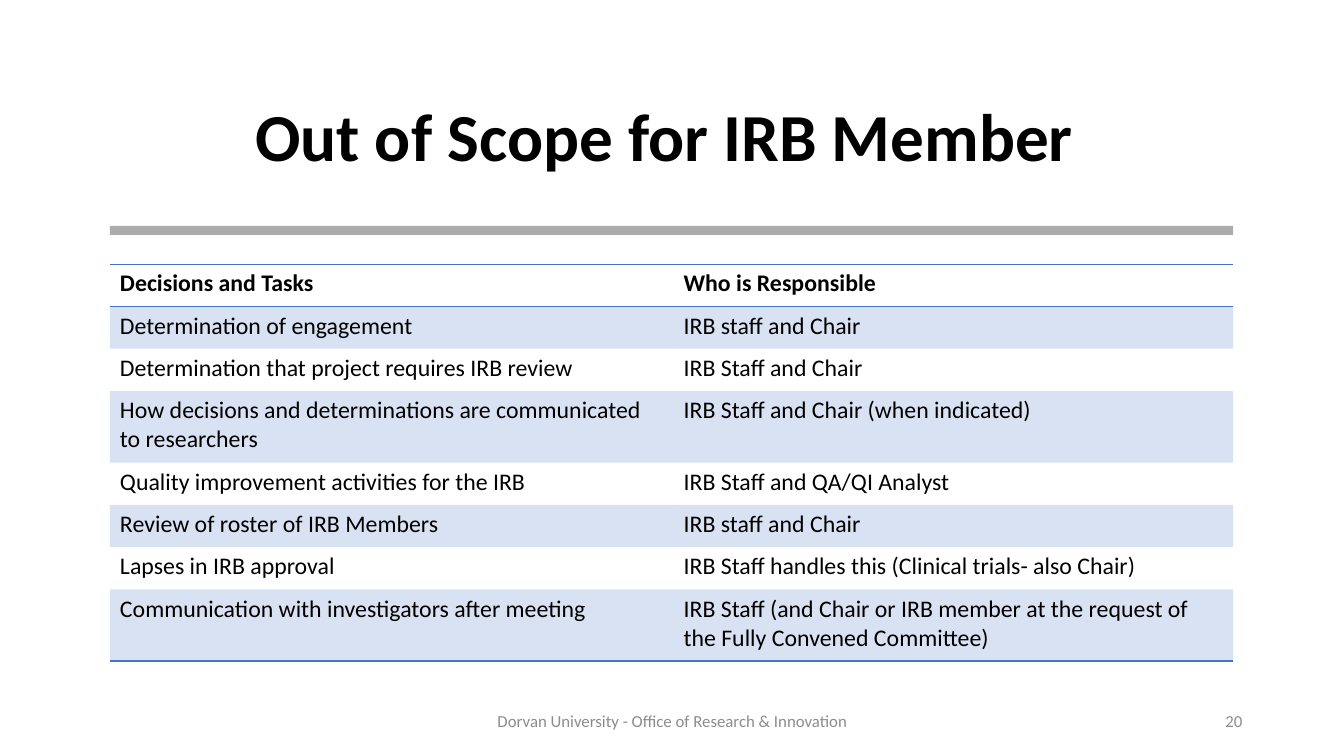
import pptx
import pptx.util
import pptx.dml.color
import pptx.enum.shapes
import pptx.enum.text
import pptx.oxml
import pptx.oxml.ns
import lxml.etree

Inches = pptx.util.Inches
Align = pptx.enum.text.PP_ALIGN
Anchor = pptx.enum.text.MSO_ANCHOR
qn = pptx.oxml.ns.qn

FONT = "Calibri"
PLAIN = "{2D5ABB26-0587-4C30-8999-92F81FD0307C}"
COLORS = {"ink": "000000", "bar": "808080", "blue": "4472C4", "note": "8C8C8C"}
ROWS = [
    ("Decisions and Tasks", "Who is Responsible"),
    ("Determination of engagement", "IRB staff and Chair"),
    ("Determination that project requires IRB review", "IRB Staff and Chair"),
    ("How decisions and determinations are communicated to researchers",
     "IRB Staff and Chair (when indicated)"),
    ("Quality improvement activities for the IRB", "IRB Staff and QA/QI Analyst"),
    ("Review of roster of IRB Members", "IRB staff and Chair"),
    ("Lapses in IRB approval", "IRB Staff handles this (Clinical trials- also Chair)"),
    ("Communication with investigators after meeting",
     "IRB Staff (and Chair or IRB member at the request of the Fully Convened Committee)"),
]
TALL = (3, 7)


def color(name):
    return pptx.dml.color.RGBColor.from_string(COLORS[name])


def write(frame, text, size, tint="ink", bold=False, align=Align.LEFT):
    para = frame.paragraphs[0]
    para.alignment = align
    run = para.add_run()
    run.text = text
    run.font.name = FONT
    run.font.size = pptx.util.Pt(size)
    run.font.bold = bold
    run.font.color.rgb = color(tint)
    return para


def tint(fill, name, share):
    fill.solid()
    fill.fore_color.rgb = color(name)
    node = fill._xPr.find(qn("a:solidFill"))[0]
    lxml.etree.SubElement(node, qn("a:alpha"), val=str(share * 1000))


def edge(cell, side):
    props = cell._tc.get_or_add_tcPr()
    line = lxml.etree.SubElement(props, qn("a:ln" + side), w=str(pptx.util.Pt(1)))
    solid = lxml.etree.SubElement(line, qn("a:solidFill"))
    lxml.etree.SubElement(solid, qn("a:srgbClr"), val=COLORS["blue"])


def add_title(slide, left, top, width, height):
    title = slide.shapes.title
    title.left, title.top = Inches(left), Inches(top)
    title.width, title.height = Inches(width), Inches(height)
    frame = title.text_frame
    frame.word_wrap = True
    frame.vertical_anchor = Anchor.MIDDLE
    para = write(frame, "Out of Scope for IRB Member ", 48, bold=True, align=Align.CENTER)
    para.line_spacing = 0.9


def add_bar(slide, left, top, width, height):
    bar = slide.shapes.add_shape(
        pptx.enum.shapes.MSO_SHAPE.RECTANGLE,
        Inches(left), Inches(top), Inches(width), Inches(height))
    bar.shadow.inherit = False
    bar.line.fill.background()
    tint(bar.fill, "bar", 65)


def add_duties(slide, left, top, width, height):
    table = slide.shapes.add_table(
        len(ROWS), 2, Inches(left), Inches(top), Inches(width), Inches(height)).table
    table._tbl.tblPr.find(qn("a:tableStyleId")).text = PLAIN
    table.horz_banding = False
    first = 5.59
    table.columns[0].width = Inches(first)
    table.columns[1].width = Inches(width - first)
    tall = 0.71
    short = (height - tall * len(TALL)) / (len(ROWS) - len(TALL))
    for r, texts in enumerate(ROWS):
        table.rows[r].height = Inches(tall if r in TALL else short)
        for c, text in enumerate(texts):
            cell = table.cell(r, c)
            cell.margin_left = cell.margin_right = Inches(0.1)
            cell.margin_top = cell.margin_bottom = Inches(0.05)
            if r == 0:
                edge(cell, "T")
            if r in (0, len(ROWS) - 1):
                edge(cell, "B")
            if r % 2:
                tint(cell.fill, "blue", 20)
            else:
                cell.fill.background()
            write(cell.text_frame, text, 17, bold=r == 0)


def add_note(slide, text, align, left, top, width, height):
    box = slide.shapes.add_textbox(
        Inches(left), Inches(top), Inches(width), Inches(height))
    frame = box.text_frame
    frame.word_wrap = True
    frame.vertical_anchor = Anchor.MIDDLE
    para = write(frame, text, 12, "note", align=align)
    para.space_after = pptx.util.Pt(6)


def main():
    deck = pptx.Presentation()
    deck.slide_width, deck.slide_height = Inches(13.33), Inches(7.5)
    slide = deck.slides.add_slide(deck.slide_layouts[5])
    add_title(slide, 0.95, 0.66, 11.43, 1.45)
    add_bar(slide, 1.09, 2.24, 11.14, 0.09)
    add_duties(slide, 1.09, 2.62, 11.14, 3.94)
    add_note(slide, "Dorvan University - Office of Research & Innovation",
             Align.CENTER, 4.42, 6.95, 4.5, 0.4)
    add_note(slide, "20", Align.RIGHT, 9.42, 6.95, 3, 0.4)
    deck.save("out.pptx")


if __name__ == "__main__":
    main()
